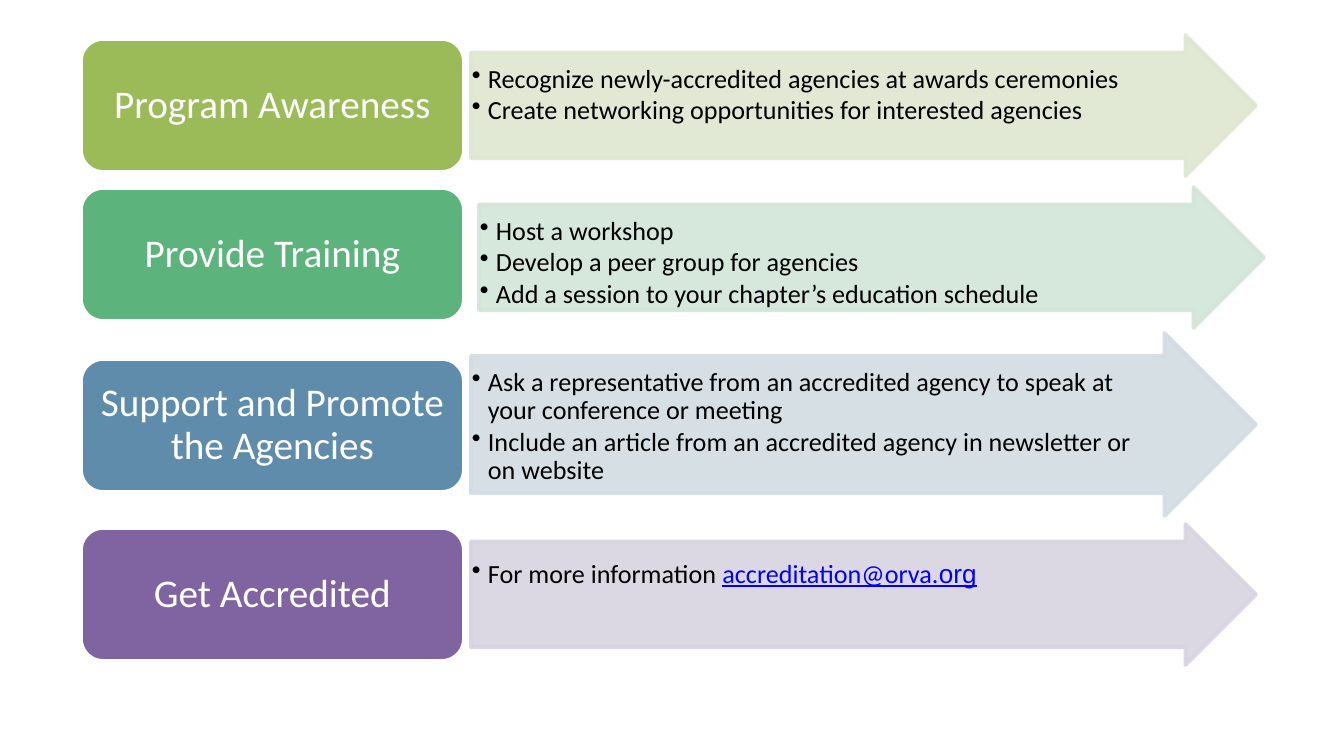
from dataclasses import dataclass

from pptx import Presentation
from pptx.dml.color import RGBColor
from pptx.enum.shapes import MSO_SHAPE as Preset
from pptx.enum.text import MSO_ANCHOR as Anchor, PP_ALIGN as Align
from pptx.oxml.ns import qn
from pptx.oxml.xmlchemy import OxmlElement
from pptx.shapes.autoshape import Shape
from pptx.slide import Slide
from pptx.text.text import TextFrame, _Paragraph as Paragraph
from pptx.util import Emu, Pt


# Theme and scale
@dataclass(frozen=True)
class Theme:
    font: str = "Calibri"
    link_font: str = "Arial"
    label_size: float = 21
    bullet_size: float = 14
    bullet_gap: float = 1.8
    line_spacing: float = 0.9
    outline: float = 2
    white: str = "FFFFFF"
    black: str = "000000"
    link: str = "0000FF"


THEME = Theme()
PX_PER_INCH = 134.4
SLIDE_SIZE = (1344, 756)
LABEL_LEFT, LABEL_WIDTH, LABEL_HEIGHT = 81, 383, 133
ARROW_WIDTH = 785
BULLET_INDENT = 16


def px(length: int) -> Emu:
    return Emu(round(length * 914400 / PX_PER_INCH))


# Content
@dataclass(frozen=True)
class Piece:
    text: str
    font: str = THEME.font
    linked: bool = False


@dataclass(frozen=True)
class Step:
    label: str
    label_color: str
    label_top: int
    arrow_color: str
    arrow_top: int
    bullets: tuple[tuple[Piece, ...], ...]
    arrow_left: int = 471
    arrow_height: int = 141
    text_inset: int = 13


STEPS = (
    Step("Program Awareness", "9BBB59", 39, "DEE7D1", 35, (
        (Piece("Recognize newly-accredited agencies at awards ceremonies"),),
        (Piece("Create networking opportunities for interested agencies"),),
    )),
    Step("Provide Training", "5CB37C", 188, "D2E5D9", 187, (
        (Piece("Host a workshop"),),
        (Piece("Develop a peer group for agencies"),),
        (Piece("Add a session to your chapter’s education schedule"),),
    ), arrow_left=479),
    Step("Support and Promote the Agencies", "608CAB", 359, "D2DCE2", 333, (
        (Piece("Ask a representative from an accredited agency to speak at your "
               "conference or meeting"),),
        (Piece("Include an article from an accredited agency in newsletter or on "
               "website"),),
    ), arrow_height=183),
    Step("Get Accredited", "8064A2", 528, "D8D3E0", 524, (
        (Piece("For more information "),
         Piece("accreditation@orva.", linked=True),
         Piece("org", THEME.link_font, linked=True)),
    ), text_inset=19),
)


# Drawing helpers
def add_block(slide: Slide, preset: Preset, box: tuple[int, int, int, int],
              fill: str, line: str) -> Shape:
    shape = slide.shapes.add_shape(preset, *map(px, box))
    shape.shadow.inherit = False
    shape.fill.solid()
    shape.fill.fore_color.rgb = RGBColor.from_string(fill)
    shape.line.color.rgb = RGBColor.from_string(line)
    shape.line.width = Pt(THEME.outline)
    return shape


def make_translucent(shape: Shape, percent: int) -> None:
    for color in shape.element.spPr.iter(qn("a:srgbClr")):
        alpha = OxmlElement("a:alpha")
        alpha.set("val", str(percent * 1000))
        color.append(alpha)


def set_up_text(frame: TextFrame, anchor: Anchor,
                insets: tuple[int, int, int, int]) -> None:
    frame.word_wrap = True
    frame.vertical_anchor = anchor
    (frame.margin_left, frame.margin_top,
     frame.margin_right, frame.margin_bottom) = map(px, insets)


def add_bullet(paragraph: Paragraph) -> None:
    properties = paragraph._p.get_or_add_pPr()
    properties.set("marL", str(px(BULLET_INDENT)))
    properties.set("indent", str(-px(BULLET_INDENT)))
    bullet = OxmlElement("a:buChar")
    bullet.set("char", "•")
    properties.append(bullet)


def write_bullet(paragraph: Paragraph, pieces: tuple[Piece, ...]) -> None:
    add_bullet(paragraph)
    paragraph.alignment = Align.LEFT
    paragraph.line_spacing = THEME.line_spacing
    paragraph.space_after = Pt(THEME.bullet_gap)
    for piece in pieces:
        run = paragraph.add_run()
        run.text = piece.text
        run.font.name = piece.font
        run.font.size = Pt(THEME.bullet_size)
        color = THEME.link if piece.linked else THEME.black
        run.font.color.rgb = RGBColor.from_string(color)
        if piece.linked:
            run.font.underline = True


def draw_arrow(slide: Slide, step: Step) -> None:
    box = (step.arrow_left, step.arrow_top, ARROW_WIDTH, step.arrow_height)
    arrow = add_block(slide, Preset.RIGHT_ARROW, box, step.arrow_color, step.arrow_color)
    arrow.adjustments[0] = 0.75
    arrow.adjustments[1] = 0.5
    make_translucent(arrow, 90)
    # Keep the text out of the outer part of the arrowhead
    frame = arrow.text_frame
    set_up_text(frame, Anchor.TOP, (1, step.text_inset, step.arrow_height // 4, 1))
    for index, pieces in enumerate(step.bullets):
        paragraph = frame.add_paragraph() if index else frame.paragraphs[0]
        write_bullet(paragraph, pieces)


def draw_label(slide: Slide, step: Step) -> None:
    box = (LABEL_LEFT, step.label_top, LABEL_WIDTH, LABEL_HEIGHT)
    label = add_block(slide, Preset.ROUNDED_RECTANGLE, box, step.label_color, THEME.white)
    set_up_text(label.text_frame, Anchor.MIDDLE, (12, 6, 12, 6))
    label.text_frame.text = step.label
    paragraph = label.text_frame.paragraphs[0]
    paragraph.alignment = Align.CENTER
    paragraph.line_spacing = THEME.line_spacing
    font = paragraph.runs[0].font
    font.name = THEME.font
    font.size = Pt(THEME.label_size)
    font.color.rgb = RGBColor.from_string(THEME.white)


def main() -> None:
    presentation = Presentation()
    presentation.slide_width, presentation.slide_height = map(px, SLIDE_SIZE)
    slide = presentation.slides.add_slide(presentation.slide_layouts[6])
    for step in STEPS:
        draw_arrow(slide, step)
        draw_label(slide, step)
    presentation.save("out.pptx")


if __name__ == "__main__":
    main()
